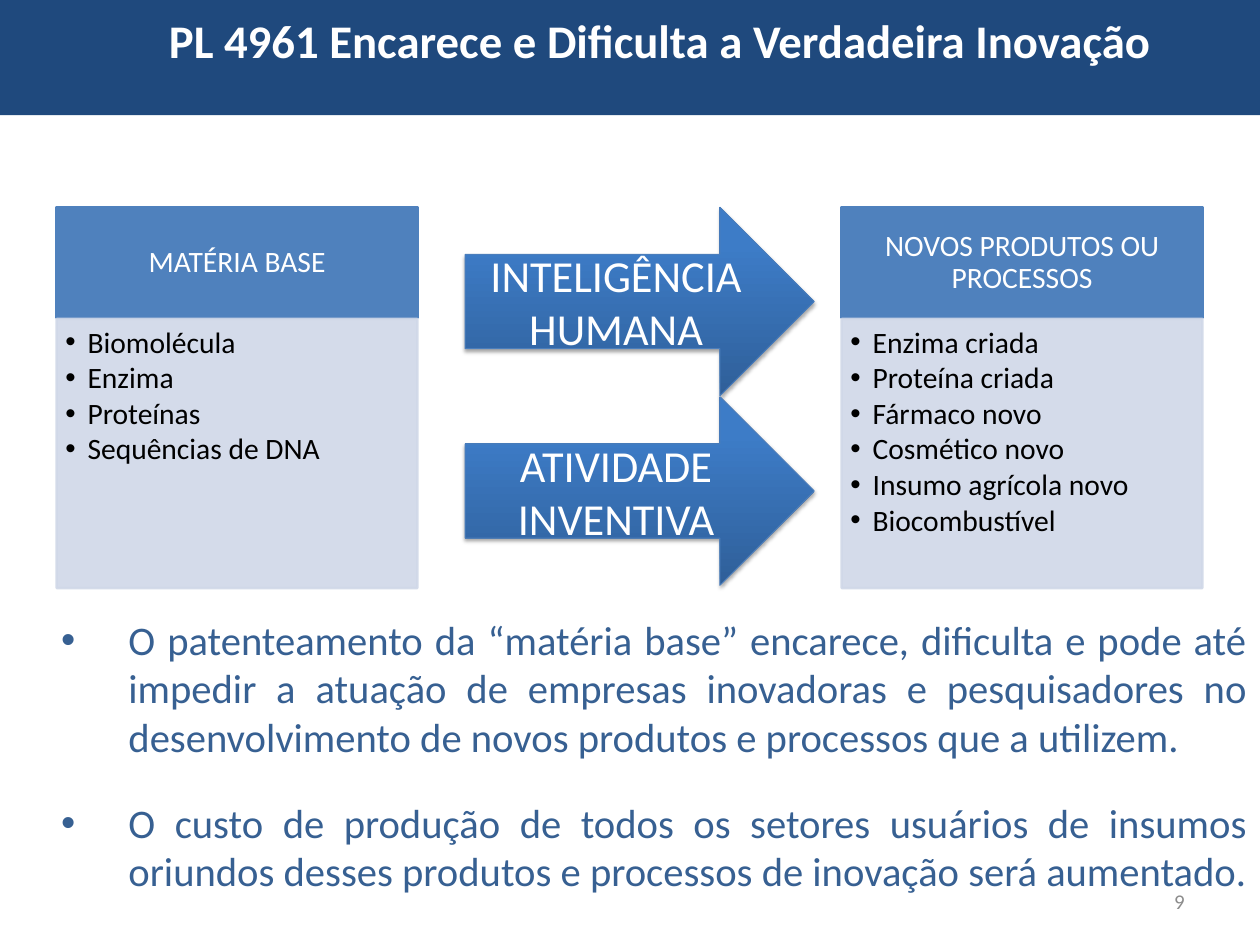
import pptx
import pptx.util
import pptx.dml.color
import pptx.enum.shapes
import pptx.enum.text
import pptx.oxml
import pptx.oxml.ns
from lxml import etree

PX = 9144  # EMU per px, 100 px to the inch
SHAPE = pptx.enum.shapes.MSO_SHAPE
ALIGN = pptx.enum.text.PP_ALIGN
ANCHOR = pptx.enum.text.MSO_ANCHOR
RGB = pptx.dml.color.RGBColor.from_string
A = pptx.oxml.ns.nsdecls("a")
qn = pptx.oxml.ns.qn

THEME = {
    "font": "Calibri",
    "white": "FFFFFF", "black": "000000", "navy": "1F497D",
    "head": "4F81BD", "panel": "D0D8E8", "body": "376092", "number": "8C8C8C",
    "arrow_dark": "2F5F99", "arrow_light": "3D7CC7", "arrow_edge": "4B7EBC",
    "title_pt": 38, "arrow_pt": 36, "body_pt": 33, "card_pt": 24, "number_pt": 17,
}

deck = pptx.Presentation()
deck.slide_width, deck.slide_height = 1422 * PX, 1067 * PX
slide = deck.slides.add_slide(deck.slide_layouts[6])


def block(preset, box, fill=None, edge=None, edge_pt=2):
    """Add a preset shape, or a text box when preset is None."""
    place = [n * PX for n in box]
    if preset is None:
        return slide.shapes.add_textbox(*place)
    shape = slide.shapes.add_shape(preset, *place)
    shape.shadow.inherit = False
    if fill:
        shape.fill.solid()
        shape.fill.fore_color.rgb = RGB(THEME[fill])
    if edge:
        shape.line.color.rgb = RGB(THEME[edge])
        shape.line.width = pptx.util.Pt(edge_pt)
    else:
        shape.line.fill.background()
    return shape


def write(shape, lines, size, color, align, anchor=ANCHOR.TOP, insets=(14, 7, 14, 7),
          hang=0, spacing=1.0, after=0):
    """Fill a shape with paragraphs; hang is the bullet indent in px."""
    frame = shape.text_frame
    frame.word_wrap = True
    frame.vertical_anchor = anchor
    (frame.margin_left, frame.margin_top,
     frame.margin_right, frame.margin_bottom) = [n * PX for n in insets]
    frame.text = "\n".join(lines)
    for para in frame.paragraphs:
        para.alignment = align
        para.line_spacing = spacing
        para.space_after = pptx.util.Pt(after)
        para.font.name = THEME["font"]
        para.font.size = pptx.util.Pt(THEME[size])
        para.font.color.rgb = RGB(THEME[color])
        if hang:
            props = para._p.get_or_add_pPr()
            props.set("marL", str(hang * PX))
            props.set("indent", str(-hang * PX))
            for bullet in (f'<a:buFont {A} typeface="Arial"/>', f'<a:buChar {A} char="•"/>'):
                props.insert_element_before(
                    pptx.oxml.parse_xml(bullet), "a:tabLst", "a:defRPr", "a:extLst")


# Slide number
number = block(None, (1019, 989, 332, 57))
write(number, ["9"], "number_pt", "number", ALIGN.RIGHT, ANCHOR.MIDDLE)

# Cards: base matter on the left, new products on the right
cards = [
    (64, "MATÉRIA BASE",
     ["Biomolécula", "Enzima", "Proteínas", "Sequências de DNA"]),
    (950, "NOVOS PRODUTOS OU PROCESSOS",
     ["Enzima criada", "Proteína criada", "Fármaco novo", "Cosmético novo",
      "Insumo agrícola novo", "Biocombustível"]),
]
for left, heading, items in cards:
    header = block(SHAPE.RECTANGLE, (left, 234, 407, 125), "head", "head")
    write(header, [heading], "card_pt", "white", ALIGN.CENTER, ANCHOR.MIDDLE,
          (14, 8, 14, 8), spacing=0.9)
    panel = block(SHAPE.RECTANGLE, (left, 360, 407, 304), "panel", "panel")
    for tint in panel._element.spPr.iter(qn("a:srgbClr")):
        etree.SubElement(tint, qn("a:alpha"), val="90000")
    write(panel, items, "card_pt", "black", ALIGN.LEFT, insets=(10, 10, 14, 16),
          hang=25, spacing=0.9, after=3)

# Arrows between the cards
for row, label in enumerate(["INTELIGÊNCIA HUMANA", "ATIVIDADE INVENTIVA"]):
    arrow = block(SHAPE.RIGHT_ARROW, (525, 234 + row * 214, 394, 213),
                  edge="arrow_edge", edge_pt=0.75)
    arrow.fill.gradient()
    arrow.fill.gradient_angle = 90
    for stop, shade, position in zip(arrow.fill.gradient_stops,
                                     ("arrow_dark", "arrow_light"), (0, 0.8)):
        stop.color.rgb = RGB(THEME[shade])
        stop.position = position
    arrow._element.spPr.find(qn("a:effectLst")).append(pptx.oxml.parse_xml(
        f'<a:outerShdw {A} blurRad="39370" dist="22860" dir="5400000" rotWithShape="0">'
        f'<a:srgbClr val="{THEME["black"]}"><a:alpha val="35000"/></a:srgbClr></a:outerShdw>'))
    write(arrow, [label], "arrow_pt", "white", ALIGN.CENTER, ANCHOR.MIDDLE)

# Consequences
consequences = block(None, (55, 687, 1367, 378))
write(consequences, [
    "O patenteamento da “matéria base” encarece, dificulta e pode até impedir a atuação "
    "de empresas inovadoras e pesquisadores no desenvolvimento de novos produtos e "
    "processos que a utilizem.",
    "O custo de produção de todos os setores usuários de insumos oriundos desses "
    "produtos e processos de inovação será aumentado.",
], "body_pt", "body", ALIGN.JUSTIFY, hang=76, after=30)

# Title band
band = block(SHAPE.RECTANGLE, (0, 0, 1422, 130), "navy")
write(band, ["PL 4961 Encarece e Dificulta a Verdadeira Inovação"],
      "title_pt", "white", ALIGN.CENTER, insets=(82, 7, 14, 7), spacing=1.1)
band.text_frame.paragraphs[0].font.bold = True

deck.save("out.pptx")
